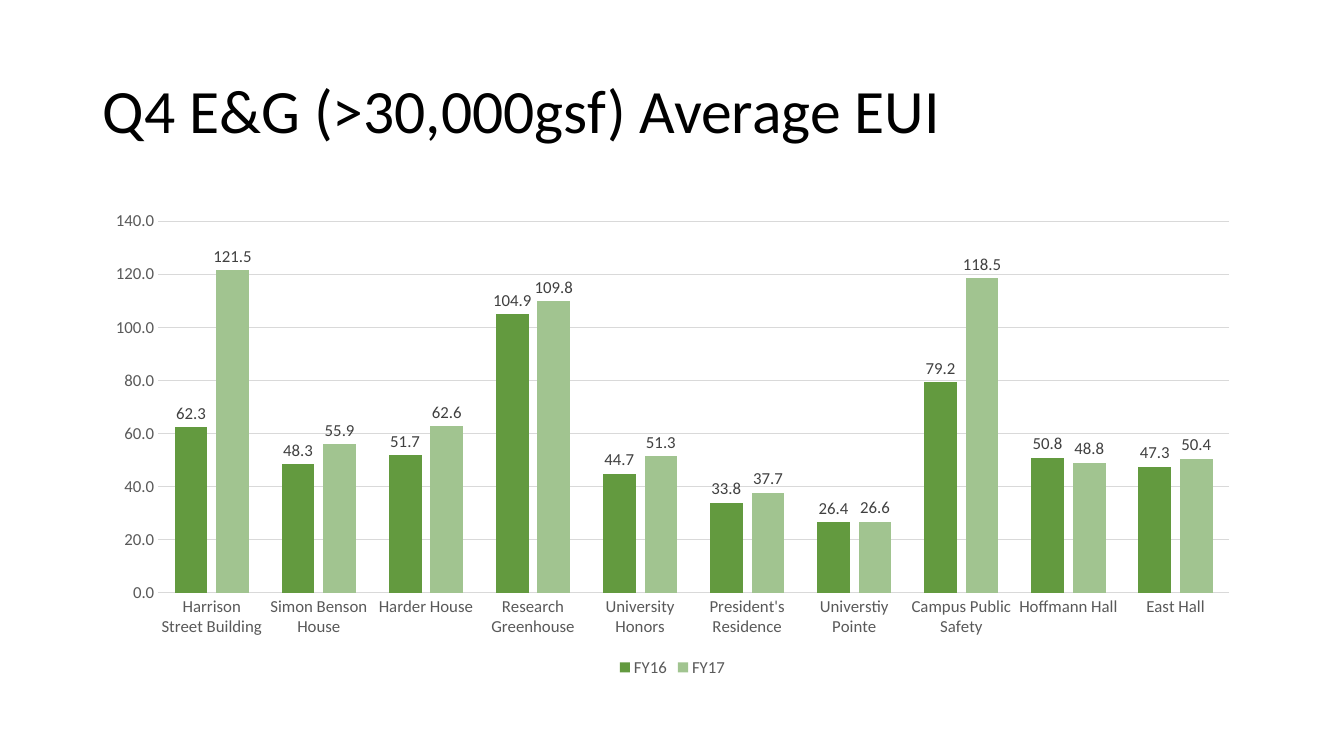
from dataclasses import dataclass

from pptx import Presentation
from pptx.chart.data import CategoryChartData
from pptx.dml.color import RGBColor
from pptx.enum.chart import XL_CHART_TYPE, XL_LABEL_POSITION, XL_LEGEND_POSITION, XL_TICK_MARK
from pptx.enum.text import MSO_ANCHOR, MSO_AUTO_SIZE, PP_ALIGN
from pptx.util import Inches, Pt

COLUMNS = XL_CHART_TYPE.COLUMN_CLUSTERED
OUTSIDE_END = XL_LABEL_POSITION.OUTSIDE_END
LEGEND_BOTTOM = XL_LEGEND_POSITION.BOTTOM
NO_TICK = XL_TICK_MARK.NONE
MIDDLE = MSO_ANCHOR.MIDDLE
NO_AUTOFIT = MSO_AUTO_SIZE.NONE
LEFT = PP_ALIGN.LEFT


@dataclass(frozen=True)
class Theme:
    font: str = "Calibri"
    title_size: int = 44
    chart_size: int = 12
    line_width: float = 0.75
    number_format: str = "0.0"
    background: str = "FFFFFF"
    title: str = "000000"
    axis_text: str = "595959"
    label_text: str = "404040"
    grid: str = "D9D9D9"
    series: tuple = ("639A3F", "A1C490")


BUILDINGS = [
    "Harrison Street Building", "Simon Benson House", "Harder House",
    "Research Greenhouse", "University Honors", "President's Residence",
    "Universtiy Pointe", "Campus Public Safety", "Hoffmann Hall", "East Hall",
]
EUI_BY_YEAR = {
    "FY16": [62.3, 48.3, 51.7, 104.9, 44.7, 33.8, 26.4, 79.2, 50.8, 47.3],
    "FY17": [121.5, 55.9, 62.6, 109.8, 51.3, 37.7, 26.6, 118.5, 48.8, 50.4],
}


class SlideBuilder:
    def __init__(self, slide, theme):
        self.s = slide
        self.theme = theme

    def set_font(self, font, size, color):
        font.name = self.theme.font
        font.size = Pt(size)
        font.color.rgb = RGBColor.from_string(color)

    def set_line(self, line):
        line.color.rgb = RGBColor.from_string(self.theme.grid)
        line.width = Pt(self.theme.line_width)

    def background(self):
        fill = self.s.background.fill
        fill.solid()
        fill.fore_color.rgb = RGBColor.from_string(self.theme.background)

    def title(self, text, left, top, width, height):
        sp = self.s.shapes.title
        sp.left, sp.top = Inches(left), Inches(top)
        sp.width, sp.height = Inches(width), Inches(height)
        tf = sp.text_frame
        tf.text = text
        tf.word_wrap = True
        tf.auto_size = NO_AUTOFIT
        tf.vertical_anchor = MIDDLE
        p = tf.paragraphs[0]
        p.alignment = LEFT
        p.line_spacing = 0.9
        self.set_font(p.font, self.theme.title_size, self.theme.title)

    def column_chart(self, categories, series, left, top, width, height):
        theme = self.theme
        data = CategoryChartData(number_format=theme.number_format)
        data.categories = categories
        for name, values in series.items():
            data.add_series(name, values)
        chart = self.s.shapes.add_chart(
            COLUMNS, Inches(left), Inches(top), Inches(width), Inches(height), data
        ).chart
        chart.has_title = False
        self.set_font(chart.font, theme.chart_size, theme.axis_text)

        # Legend
        chart.has_legend = True
        chart.legend.position = LEGEND_BOTTOM
        chart.legend.include_in_layout = False
        self.set_font(chart.legend.font, theme.chart_size, theme.axis_text)

        # Axes and gridlines
        for axis in (chart.category_axis, chart.value_axis):
            axis.major_tick_mark = axis.minor_tick_mark = NO_TICK
            self.set_font(axis.tick_labels.font, theme.chart_size, theme.axis_text)
        self.set_line(chart.category_axis.format.line)
        value_axis = chart.value_axis
        value_axis.format.line.fill.background()
        value_axis.has_major_gridlines = True
        self.set_line(value_axis.major_gridlines.format.line)
        value_axis.tick_labels.number_format = theme.number_format
        value_axis.tick_labels.number_format_is_linked = False

        # Columns and value labels
        plot = chart.plots[0]
        plot.vary_by_categories = False
        plot.gap_width = 100
        plot.overlap = -27
        for column, color in zip(plot.series, theme.series):
            column.invert_if_negative = False
            column.format.fill.solid()
            column.format.fill.fore_color.rgb = RGBColor.from_string(color)
            labels = column.data_labels
            labels.show_value = True
            labels.position = OUTSIDE_END
            labels.number_format = theme.number_format
            labels.number_format_is_linked = False
            self.set_font(labels.font, theme.chart_size, theme.label_text)


def main():
    prs = Presentation()
    prs.slide_width, prs.slide_height = Inches(13.33), Inches(7.5)
    title_only = prs.slide_layouts[5]
    builder = SlideBuilder(prs.slides.add_slide(title_only), Theme())

    builder.background()
    builder.title("Q4 E&G (>30,000gsf) Average EUI", 0.92, 0.4, 11.5, 1.45)
    builder.column_chart(BUILDINGS, EUI_BY_YEAR, 0.92, 2, 11.5, 4.76)

    prs.save("out.pptx")


if __name__ == "__main__":
    main()
